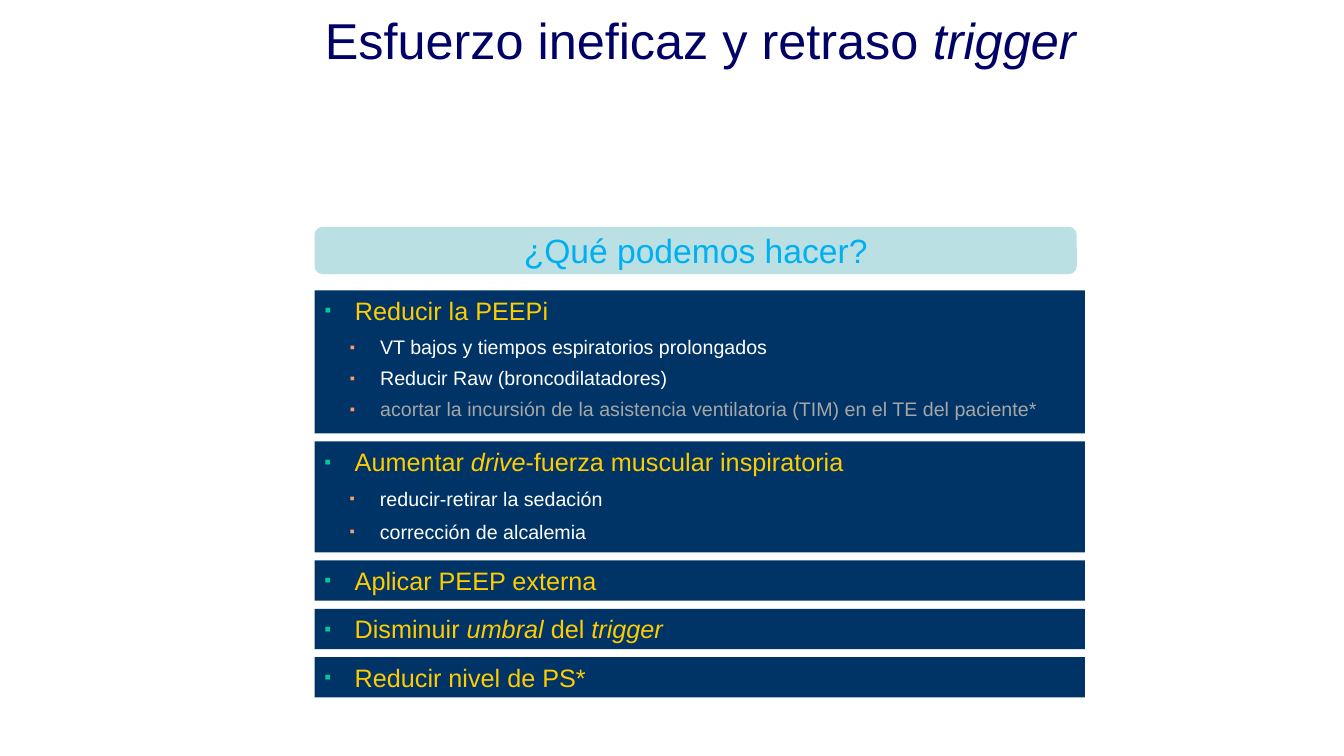
from dataclasses import dataclass

from lxml.etree import SubElement
from pptx import Presentation
from pptx.dml.color import RGBColor
from pptx.enum.shapes import MSO_SHAPE
from pptx.enum.text import MSO_ANCHOR, MSO_AUTO_SIZE, PP_ALIGN
from pptx.oxml.ns import qn
from pptx.util import Inches, Pt


@dataclass(frozen=True)
class Theme:
    font: str = "Arial"
    title: str = "000066"
    banner: str = "BBE0E3"
    question: str = "00B0F0"
    card: str = "003366"
    measure: str = "FFCC00"
    detail: str = "FFFFFF"
    muted: str = "A6A6A6"
    measure_bullet: str = "00CC99"
    detail_bullet: str = "FF9966"
    title_size: int = 36
    question_size: int = 24
    measure_size: int = 18
    detail_size: int = 14
    detail_gap: int = 7


@dataclass(frozen=True)
class Detail:
    text: str
    color: str
    line_spacing: float = 1.0


@dataclass(frozen=True)
class Card:
    measure: str  # underscores enclose italics
    height: float = 0.4
    details: tuple[Detail, ...] = ()


THEME = Theme()
LEFT, CARD_WIDTH, FIRST_TOP, CARD_GAP = 3.12, 7.64, 2.88, 0.08
BULLET_INDENT = 0.3

CARDS = (
    Card("Reducir la PEEPi", 1.42, (
        Detail("VT bajos y tiempos espiratorios prolongados", THEME.detail),
        Detail("Reducir Raw (broncodilatadores)", THEME.detail, 0.9),
        Detail("acortar la incursión de la asistencia ventilatoria (TIM) "
               "en el TE del paciente*", THEME.muted, 0.9),
    )),
    Card("Aumentar _drive_-fuerza muscular inspiratoria", 1.1, (
        Detail("reducir-retirar la sedación", THEME.detail),
        Detail("corrección de alcalemia", THEME.detail),
    )),
    Card("Aplicar PEEP externa"),
    Card("Disminuir _umbral_ del _trigger_"),
    Card("Reducir nivel de PS*"),
)


def place(shape, left: float, top: float, width: float, height: float) -> None:
    shape.left, shape.top = Inches(left), Inches(top)
    shape.width, shape.height = Inches(width), Inches(height)


def paint(shape, color: str) -> None:
    shape.fill.solid()
    shape.fill.fore_color.rgb = RGBColor.from_string(color)
    shape.line.fill.background()


def write(paragraph, text: str, size: int, color: str) -> None:
    paragraph.font.name = THEME.font
    paragraph.font.size = Pt(size)
    paragraph.font.color.rgb = RGBColor.from_string(color)
    for position, part in enumerate(text.split("_")):
        if part:
            run = paragraph.add_run()
            run.text = part
            if position % 2:
                run.font.italic = True


def add_bullet(paragraph, color: str, margin: float) -> None:
    properties = paragraph._p.get_or_add_pPr()
    properties.set("marL", str(Inches(margin)))
    properties.set("indent", str(-Inches(BULLET_INDENT)))
    bullet_color = SubElement(properties, qn("a:buClr"))
    SubElement(bullet_color, qn("a:srgbClr"), val=color)
    SubElement(properties, qn("a:buSzPct"), val="75000")
    SubElement(properties, qn("a:buFont"), typeface=THEME.font)
    SubElement(properties, qn("a:buChar"), char="▪")


def fill_card(shape, card: Card, top: float) -> None:
    place(shape, LEFT, top, CARD_WIDTH, card.height)
    paint(shape, THEME.card)
    frame = shape.text_frame
    frame.word_wrap = True
    frame.auto_size = MSO_AUTO_SIZE.NONE
    frame.vertical_anchor = MSO_ANCHOR.TOP

    measure = frame.paragraphs[0]
    measure.alignment = PP_ALIGN.LEFT
    measure.space_before = Pt(0)
    add_bullet(measure, THEME.measure_bullet, BULLET_INDENT)
    write(measure, card.measure, THEME.measure_size, THEME.measure)

    for detail in card.details:
        line = frame.add_paragraph()
        line.level = 1
        line.alignment = PP_ALIGN.LEFT
        line.line_spacing = detail.line_spacing
        line.space_before = Pt(THEME.detail_gap)
        add_bullet(line, THEME.detail_bullet, 0.55)
        write(line, detail.text, THEME.detail_size, detail.color)


def main() -> None:
    presentation = Presentation()
    presentation.slide_width, presentation.slide_height = Inches(13.33), Inches(7.5)
    slide = presentation.slides.add_slide(presentation.slide_layouts[1])

    # Title
    title = slide.shapes.title
    place(title, 2.65, 0.04, 8.59, 1.17)
    title.text_frame.auto_size = MSO_AUTO_SIZE.NONE
    title.text_frame.vertical_anchor = MSO_ANCHOR.TOP
    heading = title.text_frame.paragraphs[0]
    heading.alignment = PP_ALIGN.CENTER
    write(heading, "Esfuerzo ineficaz y retraso _trigger_", THEME.title_size, THEME.title)

    # Question banner
    banner = slide.shapes.add_shape(
        MSO_SHAPE.ROUNDED_RECTANGLE,
        Inches(LEFT), Inches(2.25), Inches(7.56), Inches(0.47))
    banner.shadow.inherit = False
    paint(banner, THEME.banner)
    banner.text_frame.word_wrap = False
    banner.text_frame.vertical_anchor = MSO_ANCHOR.MIDDLE
    question = banner.text_frame.paragraphs[0]
    question.alignment = PP_ALIGN.CENTER
    write(question, "¿Qué podemos hacer?", THEME.question_size, THEME.question)

    # Cards of measures: the first fills the body placeholder
    top = FIRST_TOP
    for number, card in enumerate(CARDS):
        if number == 0:
            panel = slide.placeholders[1]
        else:
            panel = slide.shapes.add_shape(MSO_SHAPE.RECTANGLE, 0, 0, 0, 0)
            panel.shadow.inherit = False
        fill_card(panel, card, top)
        top += card.height + CARD_GAP

    presentation.save("out.pptx")


if __name__ == "__main__":
    main()
